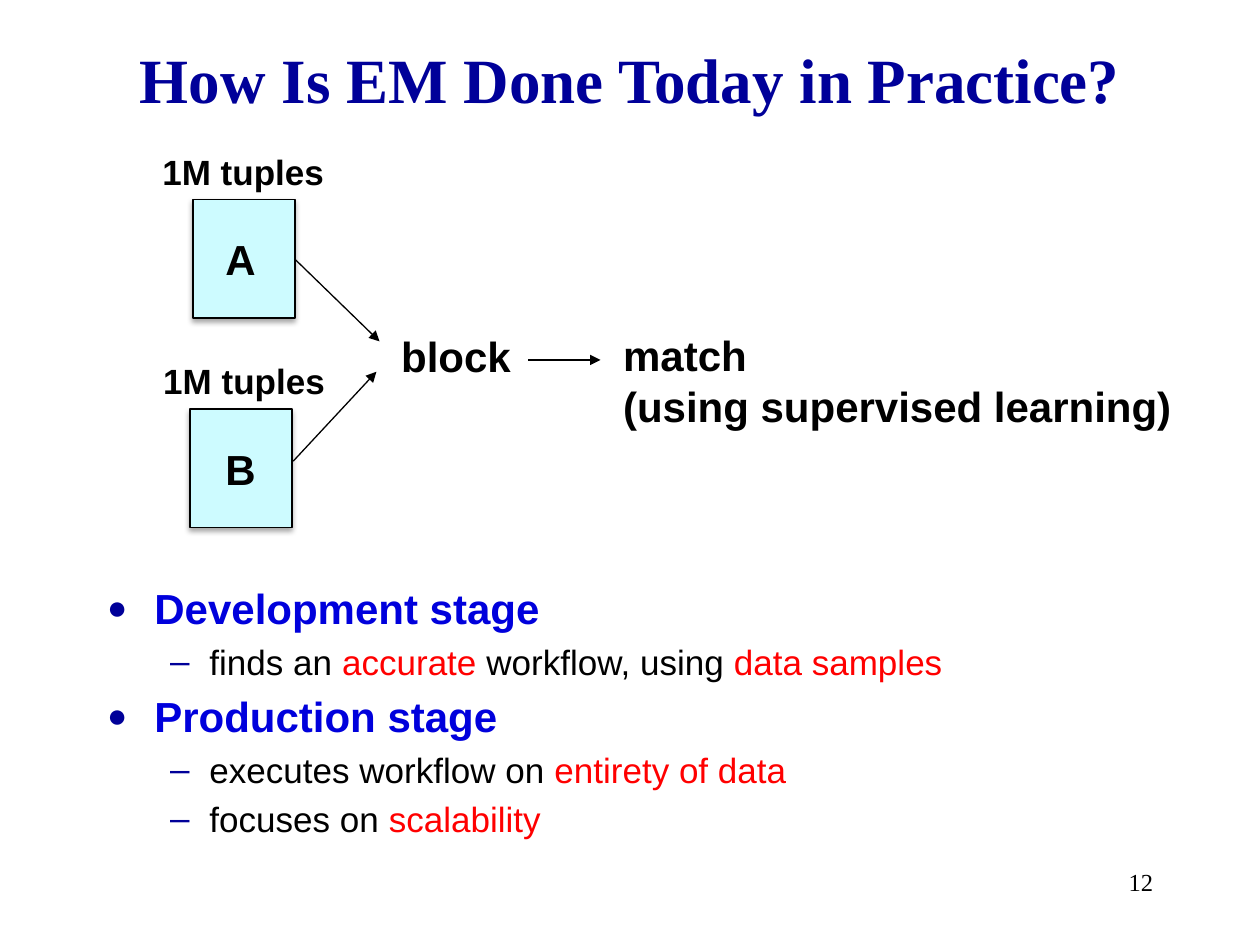
from lxml.etree import SubElement
from pptx import Presentation
from pptx.dml.color import RGBColor
from pptx.enum.shapes import MSO_CONNECTOR, MSO_SHAPE
from pptx.enum.text import MSO_ANCHOR, MSO_AUTO_SIZE, PP_ALIGN
from pptx.oxml import parse_xml
from pptx.oxml.ns import nsdecls, qn
from pptx.util import Pt

COLORS = {
    "title": "000099",
    "stage": "0000DC",
    "accent": "FF0000",
    "text": "000000",
    "table": "CDFBFF",
}
TITLE_FONT = {"name": "Times New Roman", "size": Pt(36), "bold": True}
NUMBER_FONT = {"name": "Times New Roman", "size": Pt(14), "bold": False}
LARGE_FONT = {"name": "Arial", "size": Pt(24), "bold": True}
SMALL_FONT = {"name": "Arial", "size": Pt(20), "bold": True}
DETAIL_FONT = {"name": "Arial", "size": Pt(20), "bold": False}

LEVELS = [
    {"margin": 27, "indent": -27, "bullet": "●", "bullet_size": 80, "before": 4.8},
    {"margin": 58.5, "indent": -22.5, "bullet": "–", "bullet_size": 100, "before": 4},
]
STAGES = [
    (0, [("Development stage", "stage")]),
    (1, [("finds an ", "text"), ("accurate", "accent"),
         (" workflow, using ", "text"), ("data samples", "accent")]),
    (0, [("Production stage", "stage")]),
    (1, [("executes workflow on ", "text"), ("entirety of data", "accent")]),
    (1, [("focuses on ", "text"), ("scalability", "accent")]),
]
TABLES = [
    ("A", (110.2, 114), (116.6, 129.9), (77.8, 82.4)),
    ("B", (108.5, 233.8), (116.6, 249.8), (78.3, 201.9)),
]
ARROWS = [
    ((168.5, 148.1), (216.9, 195.1)),
    ((167.6, 263.5), (215.1, 212.4)),
    ((302, 205.7), (343.2, 205.7)),
]


def color(name):
    return RGBColor.from_string(COLORS[name])


def place(shape, left, top, width, height):
    box = {"left": left, "top": top, "width": width, "height": height}
    for attribute, value in box.items():
        setattr(shape, attribute, Pt(value))


def add_run(paragraph, text, font, color_name):
    run = paragraph.add_run()
    run.text = text
    for attribute, value in font.items():
        setattr(run.font, attribute, value)
    run.font.color.rgb = color(color_name)


def add_label(slide, lines, box, font, alignment=PP_ALIGN.CENTER):
    label = slide.shapes.add_textbox(*map(Pt, box))
    frame = label.text_frame
    frame.word_wrap = True
    for index, line in enumerate(lines):
        paragraph = frame.add_paragraph() if index else frame.paragraphs[0]
        paragraph.alignment = alignment
        add_run(paragraph, line, font, "text")
    return label


def add_data_table(slide, name, corner, name_corner, caption_corner):
    table = slide.shapes.add_shape(MSO_SHAPE.RECTANGLE, *map(Pt, (*corner, 58.3, 67.7)))
    table.fill.solid()
    table.fill.fore_color.rgb = color("table")
    table.line.color.rgb = color("text")
    table.line.width = Pt(0.75)
    table.shadow.inherit = False
    effects = table._element.spPr.find(qn("a:effectLst"))
    effects.append(parse_xml(
        f'<a:outerShdw {nsdecls("a")} blurRad="{Pt(3.1)}" dist="{Pt(1.8)}" dir="5400000" '
        f'rotWithShape="0"><a:srgbClr val="{COLORS["text"]}"><a:alpha val="35000"/>'
        "</a:srgbClr></a:outerShdw>"))
    label = add_label(slide, [name], (*name_corner, 41.8, 36), LARGE_FONT)
    label.fill.solid()
    label.fill.fore_color.rgb = color("table")
    add_label(slide, ["1M tuples"], (*caption_corner, 122.4, 31.7), SMALL_FONT)


def add_arrow(slide, start, end):
    arrow = slide.shapes.add_connector(MSO_CONNECTOR.STRAIGHT, *map(Pt, (*start, *end)))
    arrow.line.color.rgb = color("text")
    arrow.line.width = Pt(0.75)
    SubElement(arrow.line._get_or_add_ln(), qn("a:tailEnd"), type="triangle")
    SubElement(arrow._element.spPr, qn("a:effectLst"))


def set_bullet(paragraph, level):
    properties = paragraph._p.get_or_add_pPr()
    properties.set("marL", str(Pt(level["margin"])))
    properties.set("indent", str(Pt(level["indent"])))
    bullet_color = SubElement(properties, qn("a:buClr"))
    SubElement(bullet_color, qn("a:srgbClr"), val=COLORS["title"])
    SubElement(properties, qn("a:buSzPct"), val=str(level["bullet_size"] * 1000))
    SubElement(properties, qn("a:buFont"), typeface="Arial")
    SubElement(properties, qn("a:buChar"), char=level["bullet"])


def fill_title(title):
    place(title, 54, 18, 612, 54)
    frame = title.text_frame
    frame.auto_size = MSO_AUTO_SIZE.NONE
    frame.vertical_anchor = MSO_ANCHOR.MIDDLE
    paragraph = frame.paragraphs[0]
    paragraph.alignment = PP_ALIGN.CENTER
    add_run(paragraph, "How Is EM Done Today in Practice?", TITLE_FONT, "title")


def fill_stages(body):
    place(body, 54, 329.5, 603.4, 150)
    frame = body.text_frame
    frame.auto_size = MSO_AUTO_SIZE.NONE
    for index, (depth, runs) in enumerate(STAGES):
        paragraph = frame.add_paragraph() if index else frame.paragraphs[0]
        level = LEVELS[depth]
        paragraph.level = depth
        paragraph.space_before = Pt(level["before"])
        set_bullet(paragraph, level)
        for text, color_name in runs:
            add_run(paragraph, text, DETAIL_FONT if depth else LARGE_FONT, color_name)


def main():
    presentation = Presentation()
    presentation.slide_width = Pt(720)
    presentation.slide_height = Pt(540)
    slide = presentation.slides.add_slide(presentation.slide_layouts[1])
    fill_title(slide.shapes.title)
    fill_stages(slide.placeholders[1])
    add_label(slide, ["12"], (516.2, 491.8, 149.8, 36), NUMBER_FONT, PP_ALIGN.RIGHT)
    for table in TABLES:
        add_data_table(slide, *table)
    add_label(slide, ["block"], (199.4, 185.4, 122.4, 36), LARGE_FONT)
    add_label(slide, ["match", "(using supervised learning)"],
              (349, 185, 420.5, 65.5), LARGE_FONT, PP_ALIGN.LEFT)
    for start, end in ARROWS:
        add_arrow(slide, start, end)
    presentation.save("out.pptx")


if __name__ == "__main__":
    main()
